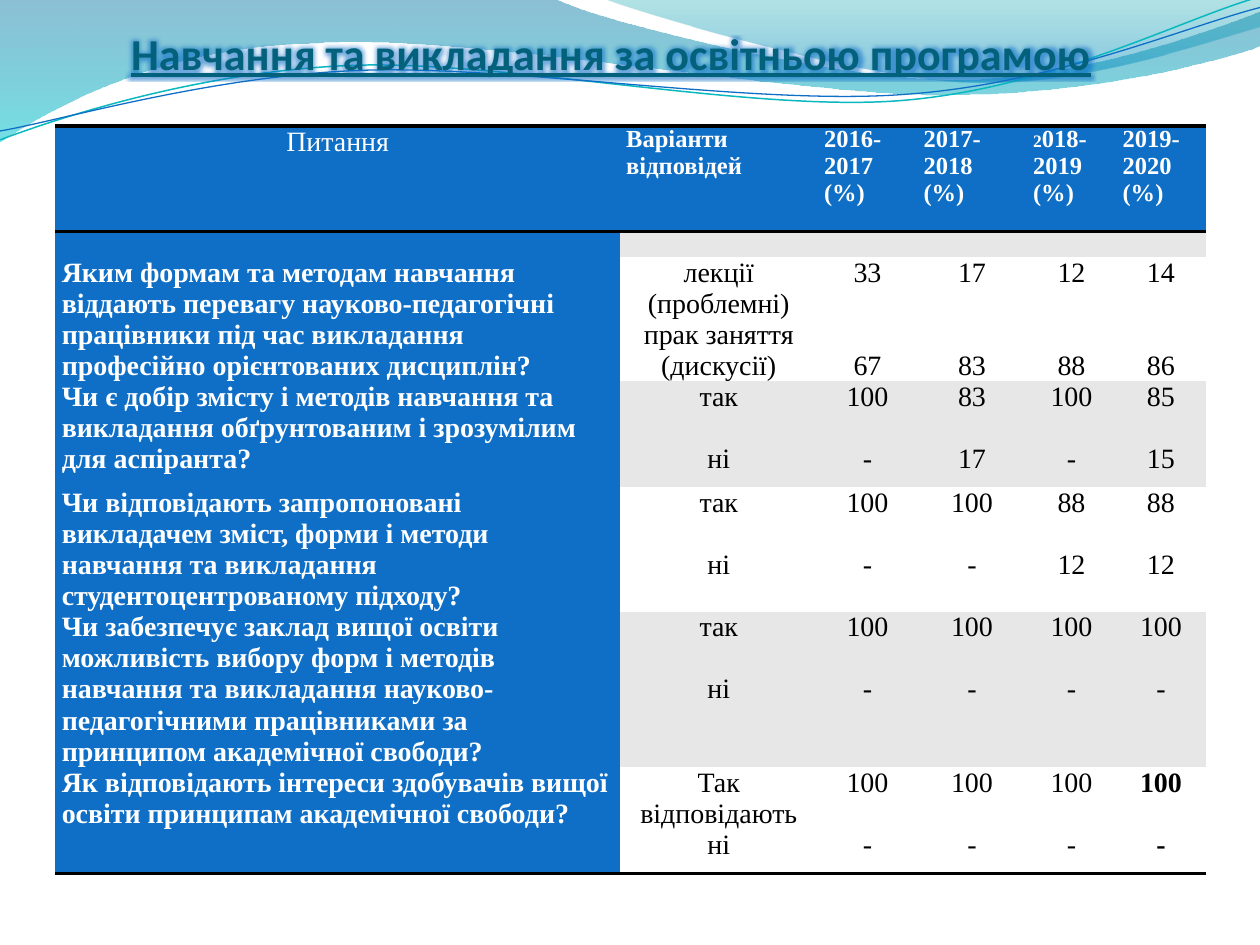
import math

import pptx
import pptx.dml.color
import pptx.enum.text
import pptx.oxml
import pptx.oxml.ns
import pptx.util
from lxml import etree
from pptx.util import Inches

COLORS = {"header": "0F6FC6", "band": "E7E7E7", "white": "FFFFFF", "black": "000000",
          "title": "04617B", "outline": "000A0C", "glow": "0F6FC6", "teal": "0AB8BF"}
TITLE = "Навчання та викладання за освітньою програмою"
SERIF = "Times New Roman"
LINE_POINTS = 17.7  # one line of 16 pt text

COLUMN_WIDTHS = [4.48, 1.57, 0.79, 0.87, 0.71, 0.71]
ROW_HEIGHTS = [0.84, 0.2, 0.77, 0.84, 0.81, 0.71, 0.84]
# A paragraph is a string or a list of (text, size) runs.
HEADERS = [
    ["Питання"], ["Варіанти відповідей"], ["2016-2017 (%)"], ["2017-2018", "(%)"],
    [[("2", 10), ("018-2019", 14)], "(%)"], ["2019-2020", "(%)"],
]
# question, answers, lines skipped between answers, values by year, lines skipped between values
QUESTIONS = [
    ("Яким формам та методам навчання віддають перевагу науково-педагогічні працівники "
     "під час викладання професійно орієнтованих дисциплін?",
     ["лекції (проблемні)", "прак заняття (дискусії)"], 0,
     [("33", "67"), ("17", "83"), ("12", "88"), ("14", "86")], 2),
    ("Чи є добір змісту і методів навчання та викладання обґрунтованим і зрозумілим для аспіранта?",
     ["так", "ні"], 1, [("100", "-"), ("83", "17"), ("100", "-"), ("85", "15")], 1),
    ("Чи відповідають запропоновані викладачем зміст, форми і методи навчання та викладання "
     "студентоцентрованому підходу?",
     ["так", "ні"], 1, [("100", "-"), ("100", "-"), ("88", "12"), ("88", "12")], 1),
    ("Чи забезпечує заклад вищої освіти можливість вибору форм i методів навчання та викладання "
     "науково-педагогічними працівниками за принципом академічної свободи?",
     ["так", "ні"], 1, [("100", "-")] * 4, 1),
    ("Як відповідають інтереси здобувачів вищої освіти принципам академічної свободи?",
     ["Так відповідають", "ні"], 0, [("100", "-")] * 4, 1),
]

# Waves: a start point, then segments of one point (line) or three points (Bezier curve).
FILLED_WAVES = [
    ([[(0, 0)], [(4.4, -0.01)], [(4.76, 0.17), (6.64, 0.63), (7.58, 0.63)],
      [(8.53, 0.63), (9.58, 0.26), (10, 0.09)], [(10.01, 0.36)],
      [(9.83, 0.44), (8.7, 0.76), (7.46, 0.75)], [(6.22, 0.75), (3.82, 0.28), (2.57, 0.34)],
      [(1.29, 0.36), (0.46, 0.83), (-0.01, 1.13)]],
     [(0, "0074A1", 45), (1, "00C6CF", 55)]),
    ([[(4.79, -0.01)], [(5.09, 0.11), (6.82, 0.62), (7.69, 0.65)],
      [(8.56, 0.69), (9.61, 0.32), (10, 0.21)], [(10, 0)]],
     [(0, "00A1A9", 30), (0.8, "008BBF", 45)]),
]
LINE_TILT = -2.7
LINE_WAVES = [
    ([[(0, 1.11)], [(0.48, 0.93), (1.58, 0.57), (2.77, 0.52)],
      [(3.95, 0.47), (5.93, 0.89), (7.13, 0.8)], [(8.33, 0.71), (9.38, 0.15), (9.98, -0.02)]],
     (4.99, 0.58), COLORS["teal"], 0.85),
    ([[(0, 1.04)], [(0.47, 0.96), (1.64, 0.61), (2.83, 0.56)],
      [(4.03, 0.51), (5.97, 0.84), (7.17, 0.75)], [(8.36, 0.67), (9.41, 0.21), (10, 0.06)]],
     (5, 0.59), COLORS["header"], 0.75),
]


def rgb(color):
    return pptx.dml.color.RGBColor.from_string(color)


def parse_drawing(tag, content):
    namespace = pptx.oxml.ns.nsdecls("a")
    name = tag.split()[0]
    return pptx.oxml.parse_xml(f"<a:{tag} {namespace}>{content}</a:{name}>")


def solid_fill(color):
    return f'<a:solidFill><a:srgbClr val="{color}"/></a:solidFill>'


def write_text(frame, paragraphs, size=16, color="000000", bold=False, underline=None,
               font=SERIF, centered=False, skipped_lines=0):
    """Fill a frame; skipped_lines is the gap before each paragraph after the first."""
    frame.word_wrap = True
    alignment = pptx.enum.text.PP_ALIGN
    for index, content in enumerate(paragraphs):
        paragraph = frame.add_paragraph() if index else frame.paragraphs[0]
        paragraph.alignment = alignment.CENTER if centered else alignment.LEFT
        if index and skipped_lines:
            paragraph.space_before = pptx.util.Pt(skipped_lines * LINE_POINTS)
        runs = [(content, size)] if isinstance(content, str) else content
        for text, run_size in runs:
            run = paragraph.add_run()
            run.text = text
            run.font.name = font
            run.font.size = pptx.util.Pt(run_size)
            run.font.bold = bold
            run.font.underline = underline
            run.font.color.rgb = rgb(color)


def turn_wave(wave, center, degrees):
    cosine, sine = math.cos(math.radians(degrees)), math.sin(math.radians(degrees))
    middle_x, middle_y = center
    return [[(middle_x + (x - middle_x) * cosine - (y - middle_y) * sine,
              middle_y + (x - middle_x) * sine + (y - middle_y) * cosine) for x, y in segment]
            for segment in wave]


def add_wave(slide, wave, close):
    """Draw straight segments between end points, then bend those that have control points."""
    segments = [[(Inches(x), Inches(y)) for x, y in segment] for segment in wave]
    builder = slide.shapes.build_freeform(*segments[0][0])
    builder.add_line_segments([segment[-1] for segment in segments[1:]], close=close)
    shape = builder.convert_to_shape()
    shape.shadow.inherit = False
    lines = list(shape.element.iter(pptx.oxml.ns.qn("a:lnTo")))
    for line, segment in zip(lines, segments[1:]):
        if len(segment) == 3:
            points = "".join(f'<a:pt x="{x - shape.left}" y="{y - shape.top}"/>' for x, y in segment)
            line.getparent().replace(line, parse_drawing("cubicBezTo", points))
    return shape


def add_background(slide):
    for wave, stops in FILLED_WAVES:
        shape = add_wave(slide, wave, True)
        shape.line.fill.background()
        shape.fill.gradient()
        shape.fill.gradient_angle = 270
        for stop, (position, color, _) in zip(shape.fill.gradient_stops, stops):
            stop.position = position
            stop.color.rgb = rgb(color)
        for element, (_, _, opacity) in zip(shape.element.iter(pptx.oxml.ns.qn("a:srgbClr")), stops):
            etree.SubElement(element, pptx.oxml.ns.qn("a:alpha"), val=str(opacity * 1000))
    for wave, center, color, width in LINE_WAVES:
        shape = add_wave(slide, turn_wave(wave, center, -LINE_TILT), False)
        shape.rotation = LINE_TILT
        shape.fill.background()
        shape.line.color.rgb = rgb(color)
        shape.line.width = pptx.util.Pt(width)


def add_title(slide):
    title = slide.shapes.title
    title.element.getparent().append(title.element)  # in front of the waves
    title.left, title.top = Inches(0.59), Inches(0.13)
    title.width, title.height = Inches(8.52), Inches(0.5)
    frame = title.text_frame
    frame.margin_left = frame.margin_right = frame.margin_bottom = 0
    frame.margin_top = Inches(0.05)
    frame.vertical_anchor = pptx.enum.text.MSO_ANCHOR.BOTTOM
    frame.auto_size = pptx.enum.text.MSO_AUTO_SIZE.NONE
    write_text(frame, [TITLE], size=25.2, color=COLORS["title"], bold=True,
               underline=True, font="Calibri", centered=True)
    properties = frame.paragraphs[0].runs[0].font._element
    properties.insert(0, parse_drawing('ln w="9525"', solid_fill(COLORS["outline"])))
    glow = f'<a:srgbClr val="{COLORS["glow"]}"><a:alpha val="60000"/></a:srgbClr>'
    properties.insert(2, parse_drawing("effectLst", f'<a:glow rad="63500">{glow}</a:glow>'))


def format_cell(cell, fill, borders):
    cell.margin_left = cell.margin_right = Inches(0.05)
    cell.margin_top = cell.margin_bottom = 0
    properties = cell._tc.get_or_add_tcPr()
    for side in borders:
        properties.append(parse_drawing(f'{side} w="25400"', solid_fill(COLORS["black"])))
    cell.fill.solid()
    cell.fill.fore_color.rgb = rgb(fill)


def add_survey_table(slide):
    frame = slide.shapes.add_table(len(ROW_HEIGHTS), len(COLUMN_WIDTHS), Inches(0.44),
                                   Inches(1), Inches(9.13), Inches(6.19))
    table = frame.table
    table.horz_banding = False
    style = table._tbl.tblPr.find(pptx.oxml.ns.qn("a:tableStyleId"))
    style.text = "{2D5ABB26-0587-4C30-8999-92F81FD0307C}"  # no style, no grid
    for column, width in zip(table.columns, COLUMN_WIDTHS):
        column.width = Inches(width)
    last_row, last_column = len(ROW_HEIGHTS) - 1, len(COLUMN_WIDTHS) - 1
    for row, height in enumerate(ROW_HEIGHTS):
        table.rows[row].height = Inches(height)
        borders = ["lnT", "lnB"] if row == 0 else ["lnB"] if row == last_row else []
        for column in range(len(COLUMN_WIDTHS)):
            fill = "header" if row == 0 or column == 0 else "band" if row % 2 else "white"
            format_cell(table.cell(row, column), COLORS[fill], borders)
            if row == 1:
                paragraph = table.cell(row, column).text_frame.paragraphs[0]
                paragraph._p.append(parse_drawing('endParaRPr sz="1000"', ""))
    for column, header in enumerate(HEADERS):
        write_text(table.cell(0, column).text_frame, header, size=14 if column else 16,
                   color=COLORS["white"], bold=column > 0, centered=column == 0)
    for row, (question, answers, answer_gap, values, value_gap) in enumerate(QUESTIONS, 2):
        write_text(table.cell(row, 0).text_frame, [question], color=COLORS["white"], bold=True)
        write_text(table.cell(row, 1).text_frame, answers, centered=True, skipped_lines=answer_gap)
        for column, pair in enumerate(values, 2):
            write_text(table.cell(row, column).text_frame, pair, centered=True,
                       bold=(row, column) == (last_row, last_column), skipped_lines=value_gap)
    frame.height = Inches(6.19)


def main():
    presentation = pptx.Presentation()
    presentation.slide_width, presentation.slide_height = Inches(10), Inches(7.5)
    slide = presentation.slides.add_slide(presentation.slide_layouts[5])
    add_background(slide)
    add_title(slide)
    add_survey_table(slide)
    presentation.save("out.pptx")


if __name__ == "__main__":
    main()
